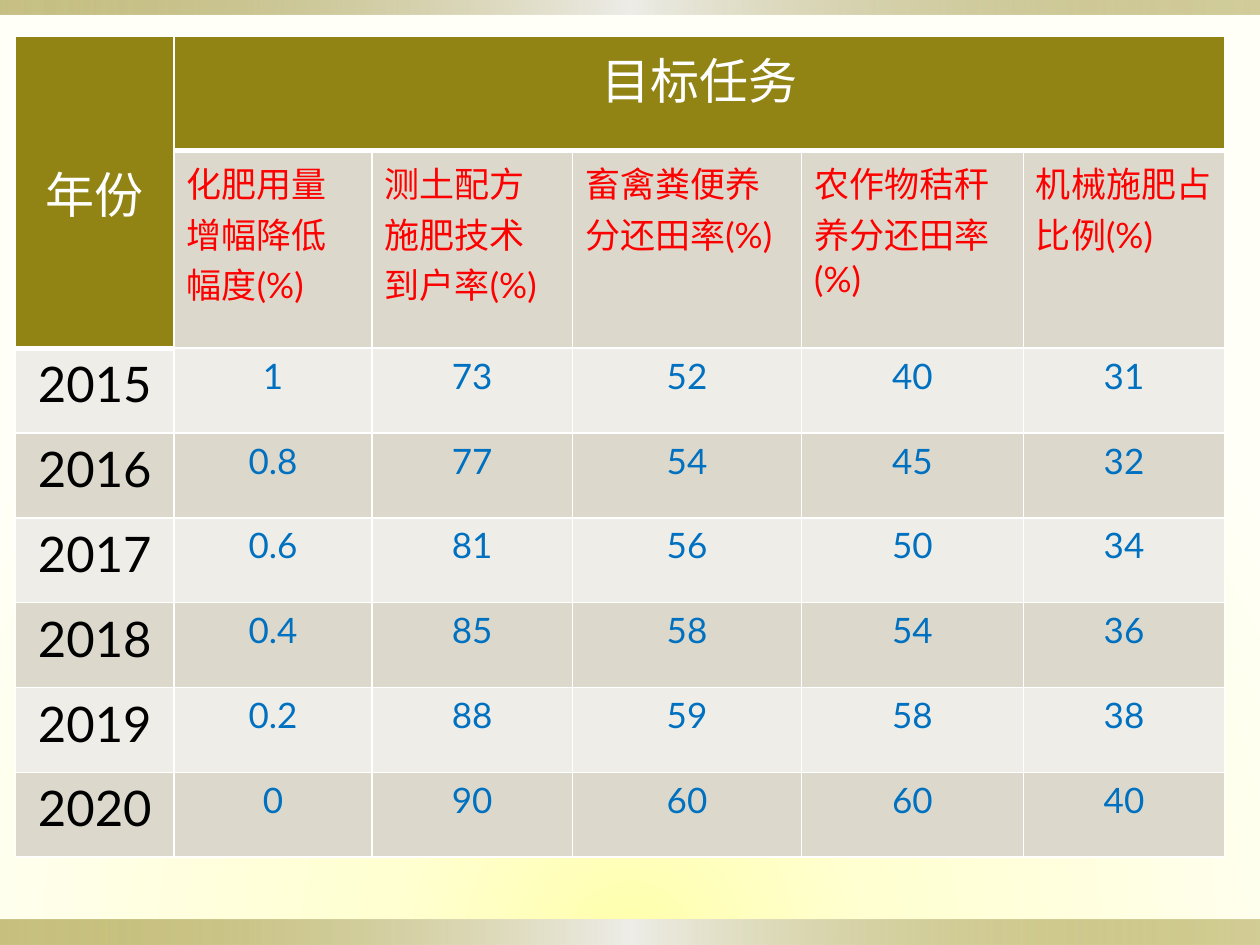
from dataclasses import dataclass, field

from lxml.etree import SubElement
from pptx import Presentation
from pptx.dml.color import RGBColor
from pptx.enum.shapes import MSO_SHAPE
from pptx.enum.text import MSO_ANCHOR, PP_ALIGN
from pptx.oxml.ns import qn
from pptx.slide import Slide
from pptx.util import Cm, Pt

COLORS = {
    "olive": "918415",
    "pale": "EEEDE8",
    "stone": "DCD9CC",
    "white": "FFFFFF",
    "black": "000000",
    "red": "FF0000",
    "blue": "0070C0",
    "yellow": "FFFFAC",
    "cream": "FFFFD2",
    "ivory": "FFFFF7",
}
COLUMN_WIDTHS = [3.2, 3.99, 4.04, 4.62, 4.47, 4.06]
ROW_HEIGHTS = [2.29, 3.99] + [1.71] * 6
MEASURES = [
    "化肥用量增幅降低幅度(%)",
    "测土配方施肥技术到户率(%)",
    "畜禽粪便养分还田率(%)",
    "农作物秸秆养分还田率(%)",
    "机械施肥占比例(%)",
]
TARGETS = [
    ["2015", "1", "73", "52", "40", "31"],
    ["2016", "0.8", "77", "54", "45", "32"],
    ["2017", "0.6", "81", "56", "50", "34"],
    ["2018", "0.4", "85", "58", "54", "36"],
    ["2019", "0.2", "88", "59", "58", "38"],
    ["2020", "0", "90", "60", "60", "40"],
]


@dataclass
class SlideBuilder:
    slide: Slide
    font: str = "Lato"
    colors: dict = field(default_factory=lambda: COLORS)

    def color(self, name):
        return RGBColor.from_string(self.colors[name])

    def gradient_stops(self, gradient, stops):
        stop_list = gradient.find(qn("a:gsLst"))
        for stop in list(stop_list):
            stop_list.remove(stop)
        for position, name, alpha in stops:
            stop = SubElement(stop_list, qn("a:gs"), pos=str(position * 1000))
            color = SubElement(stop, qn("a:srgbClr"), val=self.colors[name])
            if alpha < 100:
                SubElement(color, qn("a:alpha"), val=str(alpha * 1000))

    def background(self, stops):
        fill = self.slide.background.fill
        fill.gradient()
        gradient = self.slide.element.find(".//" + qn("a:gradFill"))
        self.gradient_stops(gradient, stops)
        gradient.remove(gradient.find(qn("a:lin")))
        path = SubElement(gradient, qn("a:path"), path="circle")
        SubElement(path, qn("a:fillToRect"), l="50000", t="150000", r="50000")

    def band(self, top, height):
        shape = self.slide.shapes.add_shape(
            MSO_SHAPE.RECTANGLE, 0, Cm(top), Cm(25.4), Cm(height))
        shape.shadow.inherit = False
        shape.line.fill.background()
        shape.fill.gradient()
        shape.fill.gradient_angle = 0
        gradient = shape.element.find(".//" + qn("a:gradFill"))
        self.gradient_stops(
            gradient, [(0, "olive", 50), (50, "pale", 100), (100, "olive", 40)])

    def table(self, left, top, widths, heights):
        table = self.slide.shapes.add_table(
            len(heights), len(widths), Cm(left), Cm(top),
            Cm(sum(widths)), Cm(sum(heights))).table
        for column, width in zip(table.columns, widths):
            column.width = Cm(width)
        for row, height in zip(table.rows, heights):
            row.height = Cm(height)
        return table

    def borders(self, cell, bottom):
        properties = cell._tc.get_or_add_tcPr()
        for side, points in (("L", 1), ("R", 1), ("T", 1), ("B", bottom)):
            line = SubElement(properties, qn("a:ln" + side), w=str(Pt(points)))
            fill = SubElement(line, qn("a:solidFill"))
            SubElement(fill, qn("a:srgbClr"), val=self.colors["white"])

    def cell(self, cell, text, fill, color, size,
             align=PP_ALIGN.CENTER, anchor=MSO_ANCHOR.TOP, bottom=1):
        self.borders(cell, bottom)
        cell.fill.solid()
        cell.fill.fore_color.rgb = self.color(fill)
        cell.vertical_anchor = anchor
        cell.text_frame.text = text
        paragraph = cell.text_frame.paragraphs[0]
        paragraph.alignment = align
        for run in paragraph.runs:
            run.font.name = self.font
            run.font.size = Pt(size)
            run.font.bold = False
            run.font.color.rgb = self.color(color)


def main():
    presentation = Presentation()
    presentation.slide_width = Cm(25.4)
    presentation.slide_height = Cm(19.05)
    builder = SlideBuilder(
        presentation.slides.add_slide(presentation.slide_layouts[6]))

    builder.background(
        [(0, "yellow", 100), (31, "cream", 100), (100, "ivory", 100)])
    builder.band(18.54, 0.51)
    builder.band(0, 0.3)

    table = builder.table(0.31, 0.74, COLUMN_WIDTHS, ROW_HEIGHTS)
    table.cell(0, 0).merge(table.cell(1, 0))
    table.cell(0, 1).merge(table.cell(0, 5))
    builder.cell(table.cell(0, 0), "年份", "olive", "white", 28,
                 anchor=MSO_ANCHOR.MIDDLE, bottom=3)
    builder.cell(table.cell(0, 1), "目标任务", "olive", "white", 28, bottom=3)
    for column, measure in enumerate(MEASURES, 1):
        builder.cell(table.cell(1, column), measure, "stone", "red", 20,
                     align=PP_ALIGN.LEFT)
    for row, values in enumerate(TARGETS, 2):
        fill = "stone" if row % 2 else "pale"
        for column, value in enumerate(values):
            color, size = ("blue", 20) if column else ("black", 28)
            builder.cell(table.cell(row, column), value, fill, color, size)

    presentation.save("out.pptx")


if __name__ == "__main__":
    main()
